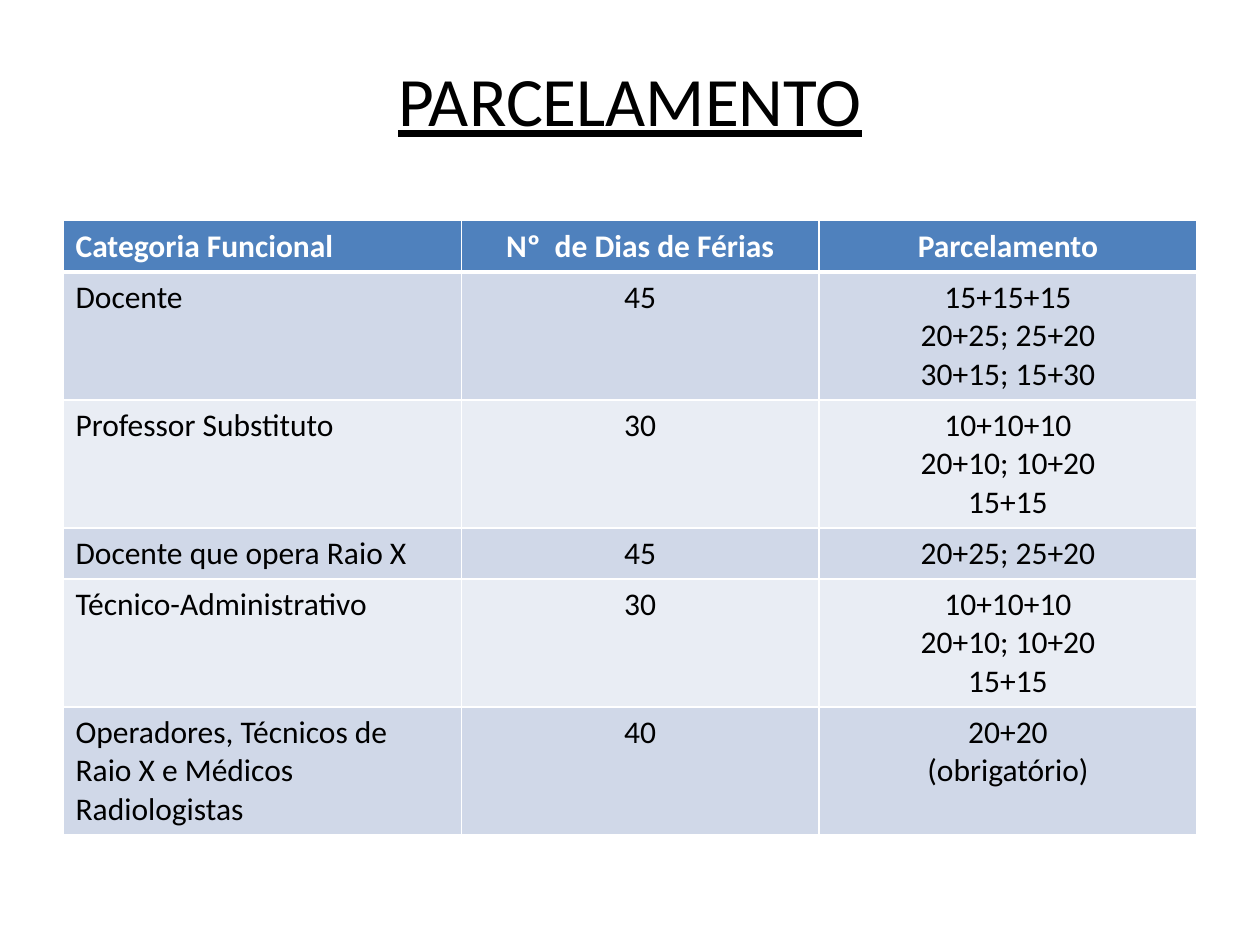
from lxml import etree
from pptx import Presentation
from pptx import util as u
from pptx.dml.color import RGBColor
from pptx.enum import text
from pptx.oxml.ns import qn

BLACK = RGBColor(0x00, 0x00, 0x00)
WHITE = RGBColor(0xFF, 0xFF, 0xFF)
HEADER_BLUE = RGBColor(0x4F, 0x81, 0xBD)
BANDS = [RGBColor(0xD0, 0xD8, 0xE8), RGBColor(0xE9, 0xED, 0xF4)]

COLUMN_WIDTHS = [8.03, 7.21, 7.62]
ROWS = [
    ("Categoria Funcional", "Nº  de Dias de Férias", "Parcelamento"),
    ("Docente", "45", "15+15+15\n20+25; 25+20\n30+15; 15+30"),
    ("Professor Substituto", "30", "10+10+10\n20+10; 10+20\n15+15"),
    ("Docente que opera Raio X", "45", "20+25; 25+20"),
    ("Técnico-Administrativo", "30", "10+10+10\n20+10; 10+20\n15+15"),
    ("Operadores, Técnicos de Raio X e Médicos Radiologistas", "40",
     "20+20\n(obrigatório)"),
]
ROW_HEIGHTS = [1.03, 2.58, 2.58, 1.03, 2.58, 2.58]


def write_text(frame, content, size=18, color=BLACK, bold=False,
               underline=False, align=text.PP_ALIGN.CENTER):
    frame.text = content
    for paragraph in frame.paragraphs:
        paragraph.alignment = align
        for run in paragraph.runs:
            font = run.font
            font.name, font.size = "Calibri", u.Pt(size)
            font.bold, font.underline = bold, underline
            font.color.rgb = color


def add_border(cell, side, points):
    properties = cell._tc.get_or_add_tcPr()
    line = etree.SubElement(properties, qn(f"a:ln{side}"), w=str(u.Pt(points)))
    fill = etree.SubElement(line, qn("a:solidFill"))
    etree.SubElement(fill, qn("a:srgbClr"), val=str(WHITE))


presentation = Presentation()
presentation.slide_width, presentation.slide_height = u.Cm(25.4), u.Cm(19.05)
slide = presentation.slides.add_slide(presentation.slide_layouts[5])

# Title
title = slide.shapes.title
title.left, title.top = u.Cm(1.27), u.Cm(0.9)
title.width, title.height = u.Cm(22.86), u.Cm(2.2)
title.text_frame.auto_size = text.MSO_AUTO_SIZE.NONE
title.text_frame.vertical_anchor = text.MSO_ANCHOR.MIDDLE
write_text(title.text_frame, "PARCELAMENTO", size=39.6, underline=True)

# Table grid
table = slide.shapes.add_table(
    len(ROWS), len(COLUMN_WIDTHS), u.Cm(1.27), u.Cm(4.45),
    u.Cm(sum(COLUMN_WIDTHS)), u.Cm(sum(ROW_HEIGHTS))).table
for column, width in zip(table.columns, COLUMN_WIDTHS):
    column.width = u.Cm(width)
for row, height in zip(table.rows, ROW_HEIGHTS):
    row.height = u.Cm(height)

# Cells: blue header, then alternating bands
for row_index, values in enumerate(ROWS):
    is_header = row_index == 0
    for column_index, value in enumerate(values):
        cell = table.cell(row_index, column_index)
        write_text(
            cell.text_frame, value, bold=is_header,
            color=WHITE if is_header else BLACK,
            align=text.PP_ALIGN.CENTER if column_index else text.PP_ALIGN.LEFT)
        for side in "LRTB":
            below_header = (row_index, side) in [(0, "B"), (1, "T")]
            add_border(cell, side, 3 if below_header else 1)
        cell.fill.solid()
        cell.fill.fore_color.rgb = (
            HEADER_BLUE if is_header else BANDS[(row_index - 1) % 2])

presentation.save("out.pptx")
